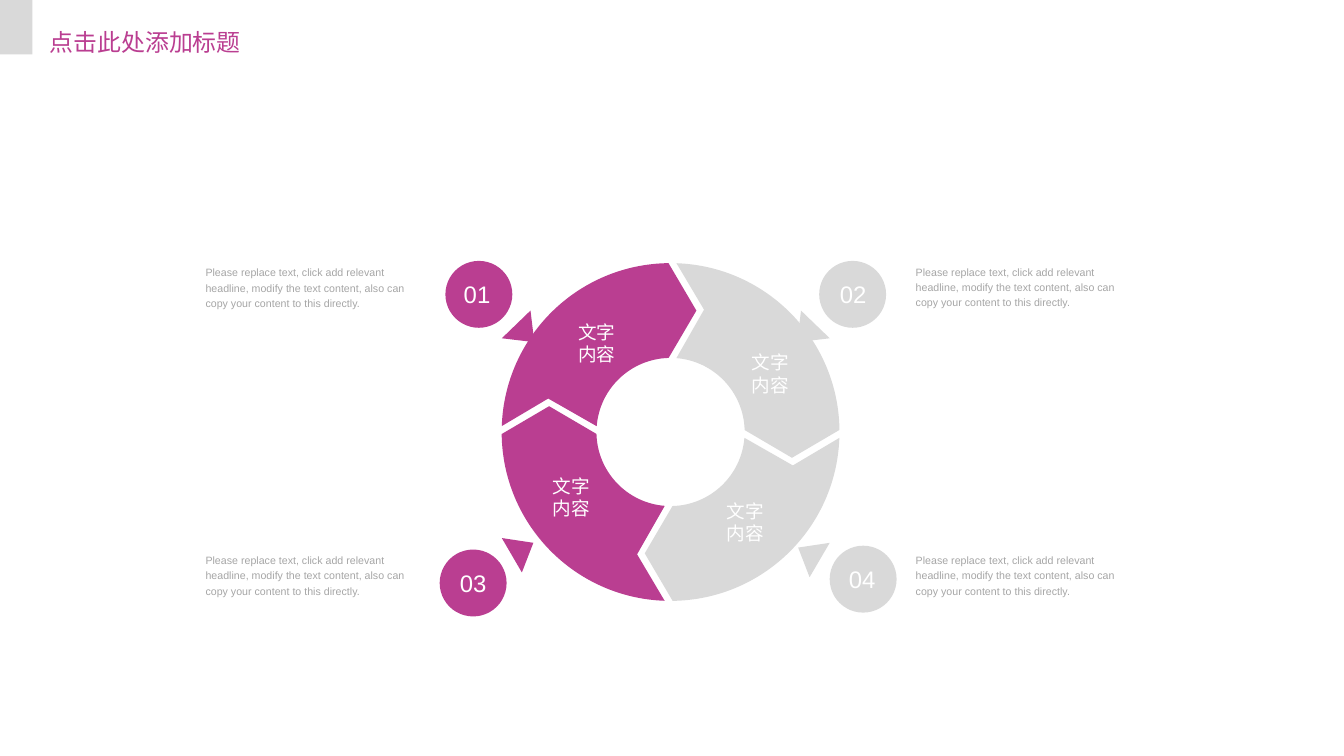
import math

from lxml import etree
from pptx import Presentation
from pptx import util as u
from pptx.dml.color import RGBColor
from pptx.enum import shapes, text
from pptx.oxml.ns import qn

MAGENTA = RGBColor(0xBA, 0x3E, 0x91)
LIGHT_GREY = RGBColor(0xD9, 0xD9, 0xD9)
TEXT_GREY = RGBColor(0xA6, 0xA6, 0xA6)
WHITE = RGBColor(0xFF, 0xFF, 0xFF)

LATIN_FONT = "Arial"
CHINESE_FONT = "Noto Sans CJK SC"

# Square grid cells, a tenth of an inch each
CELL = u.Inches(0.1)
COLUMNS, ROWS = 140.6, 79.1

# Ring geometry in cells
CENTER_X, CENTER_Y = 70.15, 45.2
OUTER_RADIUS, INNER_RADIUS = 17.67, 7.75

BADGE_SIZE = 7
DESCRIPTION = ("Please replace text, click add relevant headline, modify the "
               "text content, also can copy your content to this directly.")

# Number and its left edge, colour, badge corner, pointer corners,
# description (left, top, width)
STAGES = [
    ("04", 86.8, LIGHT_GREY, (86.8, 57.1),
     [(84.7, 60.4), (86.8, 56.8), (83.5, 57.3)], (95.8, 57.7, 23)),
    ("03", 46.1, MAGENTA, (46, 57.5),
     [(52.5, 56.3), (54.6, 59.9), (55.8, 56.8)], (21.5, 57.7, 22.5)),
    ("02", 85.85, LIGHT_GREY, (85.7, 27.3),
     [(83.8, 32.5), (86.8, 35.4), (83.4, 35.8)], (95.8, 27.55, 23)),
    ("01", 46.5, MAGENTA, (46.6, 27.3),
     [(55.5, 32.5), (52.5, 35.4), (55.9, 35.8)], (21.5, 27.6, 22.5)),
]

# Clockwise from the top left: colour, label corner and label width
SEGMENTS = [
    (MAGENTA, (59.7, 32.2), 5.5),
    (LIGHT_GREY, (77.8, 35.4), 5.6),
    (LIGHT_GREY, (75.2, 50.9), 5.6),
    (MAGENTA, (57, 48.3), 5.5),
]


def cells(count):
    return round(count * CELL)


def paint(shape, color):
    shape.shadow.inherit = False
    shape.fill.solid()
    shape.fill.fore_color.rgb = color
    shape.line.fill.background()


def add_preset(slide, kind, left, top, width, height, color):
    shape = slide.shapes.add_shape(
        kind, cells(left), cells(top), cells(width), cells(height))
    paint(shape, color)


def add_polygon(slide, points, color):
    corners = [(cells(x), cells(y)) for x, y in points]
    builder = slide.shapes.build_freeform(*corners[0])
    builder.add_line_segments(corners[1:], close=True)
    shape = builder.convert_to_shape()
    paint(shape, color)
    return shape


def bend_edge(shape, edge, controls):
    """Turn a straight edge of a polygon into a cubic curve."""
    edge.tag = qn("a:cubicBezTo")
    for index, (x, y) in enumerate(controls):
        point = etree.Element(qn("a:pt"))
        point.set("x", str(cells(x) - shape.left))
        point.set("y", str(cells(y) - shape.top))
        edge.insert(index, point)


def add_text(slide, words, left, top, width, height, size, color,
             font=LATIN_FONT, insets=(0, 0), centered=False):
    box = slide.shapes.add_textbox(
        cells(left), cells(top), cells(width), cells(height))
    frame = box.text_frame
    frame.word_wrap = True
    frame.margin_left = frame.margin_right = cells(insets[0])
    frame.margin_top = frame.margin_bottom = cells(insets[1])
    paragraph = frame.paragraphs[0]
    if centered:
        frame.vertical_anchor = text.MSO_ANCHOR.MIDDLE
        paragraph.alignment = text.PP_ALIGN.CENTER
    run = paragraph.add_run()
    run.text = words
    run.font.size = u.Pt(size)
    run.font.name = font
    run.font.color.rgb = color
    east_asian = etree.SubElement(run.font._element, qn("a:ea"))
    east_asian.set("typeface", CHINESE_FONT)
    return frame


def arc(radius, start, end):
    """Start, two control points and end of a circular arc."""
    start, end = math.radians(start), math.radians(end)
    reach = 4 / 3 * math.tan((end - start) / 4)

    def on_circle(angle, tangent):
        return (radius * (math.cos(angle) - tangent * math.sin(angle)),
                radius * (math.sin(angle) + tangent * math.cos(angle)))

    return [on_circle(start, 0), on_circle(start, reach),
            on_circle(end, -reach), on_circle(end, 0)]


def turned(points, quarter_turns):
    for _ in range(quarter_turns):
        points = [(-y, x) for x, y in points]
    return [(CENTER_X + x, CENTER_Y + y) for x, y in points]


def add_segment(slide, quarter_turns, color):
    """Chevron-ended quarter of the ring, turned clockwise."""
    outer = turned(arc(OUTER_RADIUS, 269.3, 182), quarter_turns)
    inner = turned(arc(INNER_RADIUS, 184.5, 268.5), quarter_turns)
    tip, notch = turned([(2.7, -12.7), (-12.8, -3.5)], quarter_turns)
    shape = add_polygon(
        slide, [tip, outer[0], outer[3], notch, inner[0], inner[3]], color)
    edges = list(shape._element.iter(qn("a:lnTo")))
    bend_edge(shape, edges[1], outer[1:3])
    bend_edge(shape, edges[4], inner[1:3])


def add_header(slide):
    add_preset(slide, shapes.MSO_SHAPE.RECTANGLE, 0, 0, 3.4, 5.7, LIGHT_GREY)
    frame = add_text(slide, "点击此处添加标题", 4.2, 2.4, 23.6, 3.9, 18,
                     MAGENTA, font=CHINESE_FONT, insets=(1, 0.5))
    frame.paragraphs[0].space_before = u.Pt(10.6)


def add_stage(slide, number, number_left, color, badge, pointer, description):
    left, top = badge
    add_preset(slide, shapes.MSO_SHAPE.OVAL, left, top,
               BADGE_SIZE, BADGE_SIZE, color)
    add_polygon(slide, pointer, color)
    add_text(slide, number, number_left, top + 0.8, 6.8, 5.3, 18, WHITE,
             insets=(0, 1), centered=True)
    left, top, width = description
    frame = add_text(slide, DESCRIPTION, left, top, width, 4.7, 8, TEXT_GREY)
    frame.auto_size = text.MSO_AUTO_SIZE.SHAPE_TO_FIT_TEXT
    frame.paragraphs[0].line_spacing = 1.2


def add_ring(slide):
    for turn, (color, label, width) in enumerate(SEGMENTS):
        add_segment(slide, turn, color)
        add_text(slide, "文字内容", *label, width, 7.4, 14, WHITE,
                 centered=True)


def main():
    presentation = Presentation()
    presentation.slide_width = cells(COLUMNS)
    presentation.slide_height = cells(ROWS)
    slide = presentation.slides.add_slide(presentation.slide_layouts[6])

    add_header(slide)
    # Numbered badges with their pointers and descriptions
    for stage in STAGES:
        add_stage(slide, *stage)
    add_ring(slide)

    presentation.save("out.pptx")


if __name__ == "__main__":
    main()
